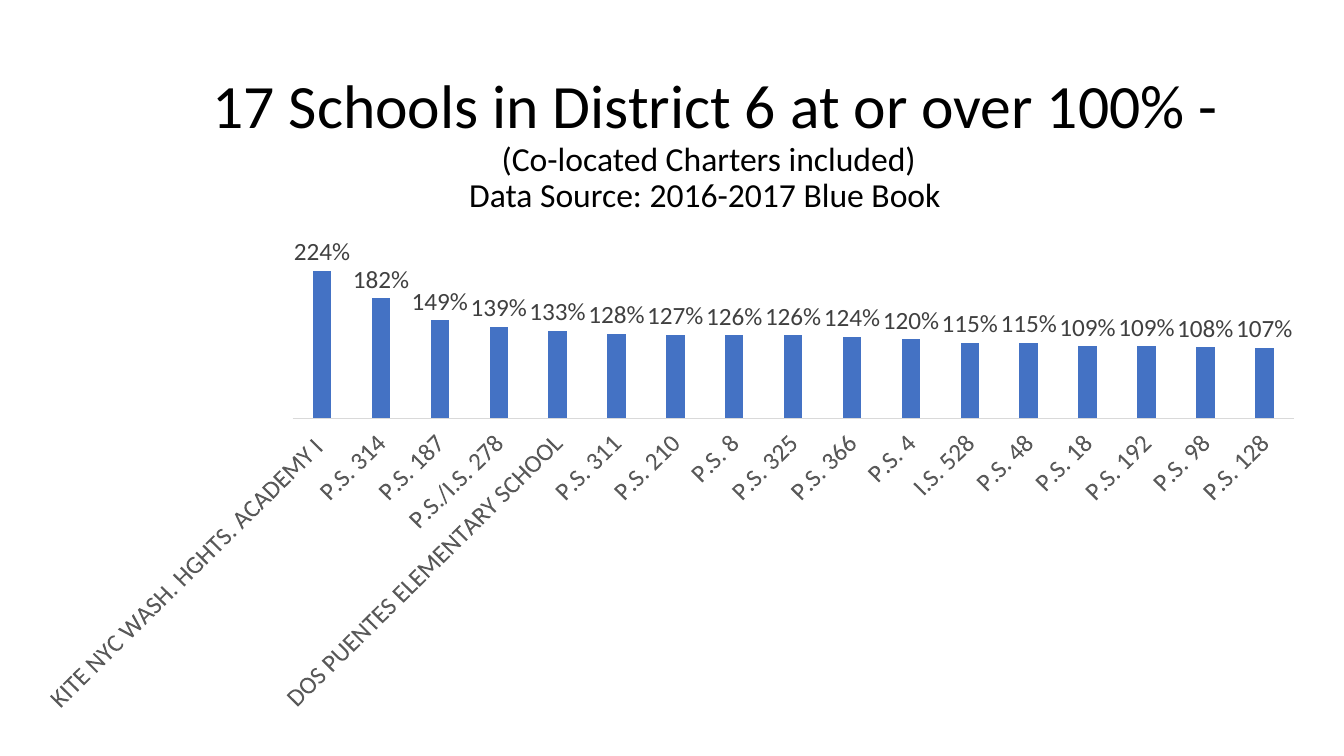
from pptx import Presentation
from pptx.chart.data import CategoryChartData
from pptx.dml.color import RGBColor
from pptx.enum.chart import XL_CHART_TYPE, XL_LABEL_POSITION, XL_TICK_LABEL_POSITION, XL_TICK_MARK
from pptx.enum.text import MSO_ANCHOR, MSO_AUTO_SIZE, PP_ALIGN
from pptx.oxml.ns import qn
from pptx.util import Inches, Pt

COLUMN_CLUSTERED = XL_CHART_TYPE.COLUMN_CLUSTERED
OUTSIDE_END = XL_LABEL_POSITION.OUTSIDE_END
LABELS_LOW = XL_TICK_LABEL_POSITION.LOW
NO_TICK = XL_TICK_MARK.NONE
MIDDLE = MSO_ANCHOR.MIDDLE
NO_AUTOFIT = MSO_AUTO_SIZE.NONE
CENTER = PP_ALIGN.CENTER

TITLE_ONLY_LAYOUT = 5
COLORS = {
    "title": "000000",
    "bar": "4472C4",
    "axis_label": "595959",
    "value_label": "404040",
    "axis_line": "D9D9D9",
}

TITLE_LINES = [
    (" 17 Schools in District 6 at or over 100% -", 44),
    ("(Co-located Charters included)", 24),
    ("Data Source: 2016-2017 Blue Book ", 24),
]
SCHOOL_UTILIZATION = [
    ("KITE NYC WASH. HGHTS. ACADEMY I ", 2.24),
    ("P.S. 314", 1.82),
    ("P.S. 187", 1.49),
    ("P.S./I.S. 278", 1.39),
    ("DOS PUENTES ELEMENTARY SCHOOL", 1.33),
    ("P.S. 311", 1.28),
    ("P.S. 210", 1.27),
    ("P.S. 8", 1.26),
    ("P.S. 325", 1.26),
    ("P.S. 366", 1.24),
    ("P.S. 4", 1.2),
    ("I.S. 528", 1.15),
    ("P.S. 48", 1.15),
    ("P.S. 18", 1.09),
    ("P.S. 192", 1.09),
    ("P.S. 98", 1.08),
    ("P.S. 128", 1.07),
]


class SlideBuilder:
    """Holds the slide being built and its text style."""

    def __init__(self, slide, font_name="Calibri"):
        self.slide = slide
        self.font_name = font_name

    def style_font(self, font, size, color):
        font.name = self.font_name
        font.size = Pt(size)
        font.color.rgb = RGBColor.from_string(COLORS[color])

    def add_title(self, lines, left, top, width, height):
        """Fill the title with one paragraph of (text, size) lines."""
        title = self.slide.shapes.title
        title.left, title.top = Inches(left), Inches(top)
        title.width, title.height = Inches(width), Inches(height)
        text_frame = title.text_frame
        text_frame.text = "\v".join(text for text, size in lines)
        text_frame.word_wrap = True
        text_frame.auto_size = NO_AUTOFIT
        text_frame.vertical_anchor = MIDDLE
        paragraph = text_frame.paragraphs[0]
        paragraph.alignment = CENTER
        paragraph.line_spacing = 0.9
        for run, (text, size) in zip(paragraph.runs, lines):
            self.style_font(run.font, size, "title")
        # A line break takes the size of the line it ends
        for line_break, (text, size) in zip(paragraph._p.findall(qn("a:br")), lines):
            properties = line_break.makeelement(qn("a:rPr"), {"sz": str(size * 100)})
            line_break.append(properties)

    def add_column_chart(self, rows, left, top, width, height):
        chart_data = CategoryChartData(number_format="0%")
        chart_data.categories = [name for name, value in rows]
        chart_data.add_series("Series 1", [value for name, value in rows])
        chart = self.slide.shapes.add_chart(
            COLUMN_CLUSTERED, Inches(left), Inches(top), Inches(width), Inches(height), chart_data
        ).chart
        chart.has_legend = False
        chart.has_title = False
        self.style_font(chart.font, 10, "title")
        self.style_axes(chart)

        plot = chart.plots[0]
        plot.vary_by_categories = False
        plot.gap_width = 219
        plot.overlap = -27
        fill = plot.series[0].format.fill
        fill.solid()
        fill.fore_color.rgb = RGBColor.from_string(COLORS["bar"])

        labels = plot.series[0].data_labels
        labels.show_value = True
        labels.position = OUTSIDE_END
        labels.number_format = "0%"
        labels.number_format_is_linked = False
        self.style_font(labels.font, 18, "value_label")

    def style_axes(self, chart):
        chart.value_axis.visible = False
        chart.value_axis.has_major_gridlines = False
        chart.value_axis.minimum_scale = 0
        axis = chart.category_axis
        axis.major_tick_mark = NO_TICK
        axis.minor_tick_mark = NO_TICK
        axis.tick_label_position = LABELS_LOW
        axis.format.line.width = Pt(0.75)
        axis.format.line.color.rgb = RGBColor.from_string(COLORS["axis_line"])
        self.style_font(axis.tick_labels.font, 18, "axis_label")
        text_body = axis._element.find(qn("c:txPr")).find(qn("a:bodyPr"))
        text_body.set("rot", str(-45 * 60000))
        text_body.set("vert", "horz")


def main():
    presentation = Presentation()
    presentation.slide_width = Inches(13.33)
    presentation.slide_height = Inches(7.5)
    layout = presentation.slide_layouts[TITLE_ONLY_LAYOUT]
    builder = SlideBuilder(presentation.slides.add_slide(layout))
    builder.add_title(TITLE_LINES, 1.28, 0.53, 11.5, 1.82)
    builder.add_column_chart(SCHOOL_UTILIZATION, 0.17, 2.35, 12.92, 4.82)
    presentation.save("out.pptx")


if __name__ == "__main__":
    main()
